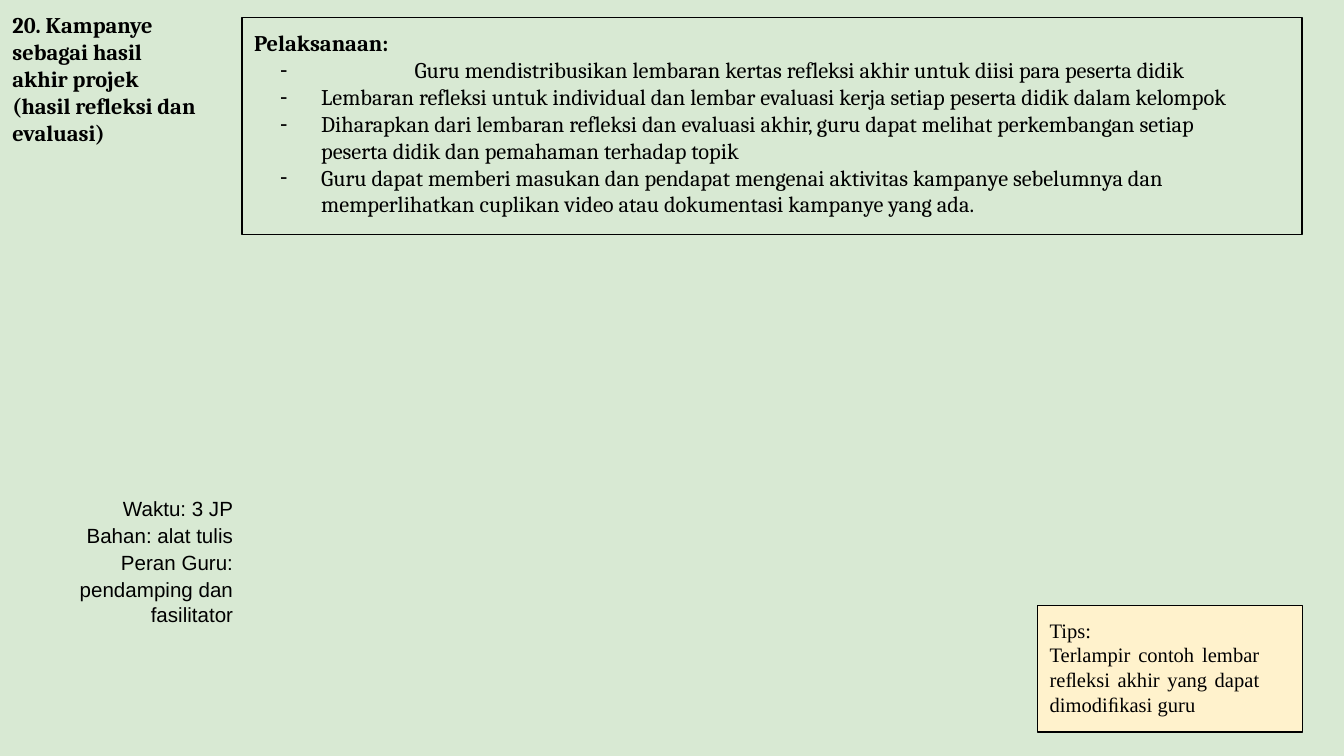
from copy import deepcopy

from lxml.etree import SubElement
from pptx import Presentation
from pptx.dml.color import RGBColor
from pptx.enum.shapes import MSO_SHAPE
from pptx.enum.text import MSO_ANCHOR, MSO_AUTO_SIZE, PP_ALIGN
from pptx.oxml.ns import qn
from pptx.util import Pt

COLORS = {"page": "D8E9D3", "tips": "FFF2CC", "ink": "000000"}

TITLE = "20. Kampanye\vsebagai hasil\vakhir projek\v(hasil refleksi dan\vevaluasi)"
STEPS = [
    "Guru mendistribusikan lembaran kertas refleksi akhir untuk diisi para peserta didik",
    "Lembaran refleksi untuk individual dan lembar evaluasi kerja setiap peserta didik "
    "dalam kelompok",
    "Diharapkan dari lembaran refleksi dan evaluasi akhir, guru dapat melihat "
    "perkembangan setiap peserta didik dan pemahaman terhadap topik",
    "Guru dapat memberi masukan dan pendapat mengenai aktivitas kampanye sebelumnya dan "
    "memperlihatkan cuplikan video atau dokumentasi kampanye yang ada.",
]
DETAILS = "Waktu: 3 JP\vBahan: alat tulis\vPeran Guru:\vpendamping dan"
TIPS = "Terlampir contoh lembar reﬂeksi akhir yang dapat dimodiﬁkasi guru"


def color(name):
    return RGBColor.from_string(COLORS[name])


def place(box, left, top, width, height):
    box.left, box.top, box.width, box.height = Pt(left), Pt(top), Pt(width), Pt(height)


def set_frame(box, left=0, top=0, right=0):
    frame = box.text_frame
    frame.word_wrap = True
    frame.auto_size = MSO_AUTO_SIZE.NONE
    frame.vertical_anchor = MSO_ANCHOR.TOP
    frame.margin_left, frame.margin_top = Pt(left), Pt(top)
    frame.margin_right, frame.margin_bottom = Pt(right), Pt(0)
    return frame


def set_border(box, fill):
    box.fill.solid()
    box.fill.fore_color.rgb = color(fill)
    box.line.color.rgb = color("ink")
    box.line.width = Pt(0.75)


def set_bullet(para, indent=None, hanging=0):
    """Give a dash bullet, or none when there is no indent."""
    props = para._p.get_or_add_pPr()
    props.set("marL", str(Pt(indent or 0)))
    props.set("indent", str(Pt(-hanging)))
    if indent is None:
        SubElement(props, qn("a:buNone"))
        return
    bullet_color = SubElement(props, qn("a:buClr"))
    SubElement(bullet_color, qn("a:srgbClr")).set("val", COLORS["ink"])
    SubElement(props, qn("a:buChar")).set("char", "-")


def format_para(para, font, size, bold=False, align=PP_ALIGN.LEFT, spacing=1.0):
    para.alignment = align
    para.line_spacing = spacing
    para.space_before = para.space_after = Pt(0)
    for span in para.runs:
        span.font.name = font
        span.font.size = Pt(size)
        span.font.bold = bold
        span.font.color.rgb = color("ink")
    # Line breaks take the size of the text around them
    for line_break in para._p.findall(qn("a:br")):
        line_break.append(deepcopy(para.runs[0]._r.rPr))


def add_title(page):
    box = page.shapes.title
    place(box, 5.76, 5.04, 101.52, 74.16)
    frame = set_frame(box, left=0.9, top=1)
    frame.text = TITLE
    format_para(frame.paragraphs[0], "Cambria", 12, bold=True)


def add_steps(page):
    box = page.placeholders[1]
    place(box, 129.6, 9.2, 568, 116.5)
    set_border(box, "page")
    frame = set_frame(box, left=6.5, top=6.5, right=32)
    frame.text = "\n".join(["Pelaksanaan:"] + STEPS)
    heading, *steps = frame.paragraphs
    set_bullet(heading)
    format_para(heading, "Cambria", 12, bold=True)
    for number, para in enumerate(steps):
        # The first step stands further from its dash
        indent, hanging = (86, 72) if number == 0 else (36, 22)
        set_bullet(para, indent, hanging)
        format_para(para, "Cambria", 12)


def add_details(page):
    box = page.shapes.add_textbox(Pt(34), Pt(262.8), Pt(91), Pt(74.2))
    frame = set_frame(box, top=1.5)
    frame.text = DETAILS + "\nfasilitator"
    for para, spacing in zip(frame.paragraphs, (1.1, 1.0)):
        format_para(para, "Arial", 11, align=PP_ALIGN.RIGHT, spacing=spacing)


def add_tips(page):
    box = page.shapes.add_shape(
        MSO_SHAPE.RECTANGLE, Pt(555.8), Pt(324.5), Pt(142), Pt(67.7))
    box.shadow.inherit = False
    set_border(box, "tips")
    frame = set_frame(box, left=6.5, top=6.5, right=23)
    frame.text = "Tips:\n" + TIPS
    for para, align in zip(frame.paragraphs, (PP_ALIGN.LEFT, PP_ALIGN.JUSTIFY)):
        format_para(para, "Times New Roman", 11, align=align)


def main():
    deck = Presentation()
    deck.slide_width, deck.slide_height = Pt(720), Pt(405)
    page = deck.slides.add_slide(deck.slide_layouts[1])
    page.background.fill.solid()
    page.background.fill.fore_color.rgb = color("page")
    add_title(page)
    add_steps(page)
    add_details(page)
    add_tips(page)
    deck.save("out.pptx")


if __name__ == "__main__":
    main()
